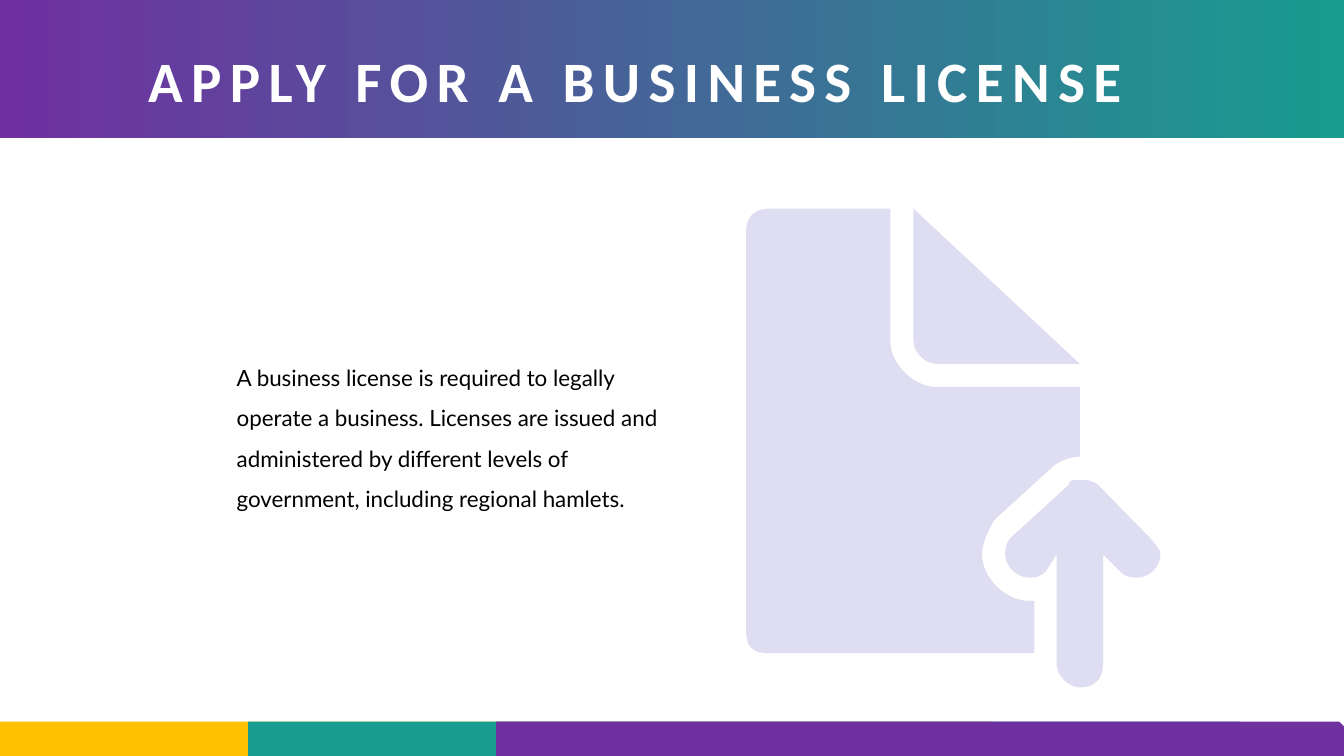
from dataclasses import dataclass

from lxml.etree import SubElement
from pptx import Presentation
from pptx.dml.color import RGBColor
from pptx.enum.shapes import MSO_SHAPE as Preset
from pptx.enum.text import MSO_ANCHOR as Anchor, MSO_AUTO_SIZE as AutoSize, PP_ALIGN as Align
from pptx.oxml.ns import qn
from pptx.shapes.autoshape import Shape
from pptx.slide import Slide
from pptx.util import Inches, Pt

WHITE = RGBColor(0xFF, 0xFF, 0xFF)
BLACK = RGBColor(0x00, 0x00, 0x00)
PURPLE = RGBColor(0x70, 0x30, 0xA0)
TEAL = RGBColor(0x18, 0x9C, 0x8F)
AMBER = RGBColor(0xFF, 0xC0, 0x00)
LAVENDER = RGBColor(0xDE, 0xDD, 0xF1)

PAGE_WIDTH, PAGE_HEIGHT = 13.33, 7.5
HEADER_HEIGHT = 1.37
BAR_STEP, BAR_HEIGHT = 2.46, 0.34


@dataclass(frozen=True)
class Bar:
    width: float
    color: RGBColor


@dataclass(frozen=True)
class TextStyle:
    font: str
    size: float
    color: RGBColor
    line_spacing: float
    space_before: float = 0
    bold: bool = False
    tracking: float = 0


@dataclass(frozen=True)
class Contour:
    start: tuple[float, float]
    segments: list[tuple[float, ...]]


TITLE_STYLE = TextStyle("Calibri", 40.8, WHITE, 0.8, space_before=10, bold=True, tracking=6)
BODY_STYLE = TextStyle("Lato", 16, BLACK, 1.5)

BARS = [Bar(9.89, AMBER), Bar(9.89, TEAL), Bar(8.42, PURPLE)]

ARROW = Contour((11.28, 5.73), [
    (11.23, 5.73, 11.17, 5.73, 11.11, 5.67),
    (10.94, 5.5),
    (10.94, 6.59),
    (10.94, 6.7, 10.89, 6.82, 10.71, 6.82),
    (10.6, 6.82, 10.48, 6.7, 10.48, 6.59),
    (10.48, 5.5),
    (10.37, 5.67),
    (10.31, 5.73, 10.26, 5.73, 10.2, 5.73),
    (10.09, 5.73, 9.97, 5.62, 9.97, 5.5),
    (9.97, 5.45, 9.97, 5.39, 10.03, 5.33),
    (10.6, 4.81),
    (10.6, 4.76, 10.65, 4.76, 10.71, 4.76),
    (10.77, 4.76, 10.83, 4.76, 10.89, 4.81),
    (11.4, 5.33),
    (11.45, 5.39, 11.51, 5.45, 11.51, 5.5),
    (11.51, 5.62, 11.4, 5.73, 11.28, 5.73),
])
SHEET = Contour((9.86, 5.16), [
    (9.8, 5.27, 9.74, 5.39, 9.74, 5.5),
    (9.74, 5.73, 9.97, 5.96, 10.2, 5.96),
    (10.26, 5.96),
    (10.26, 6.48),
    (7.63, 6.48),
    (7.46, 6.48, 7.4, 6.42, 7.4, 6.25),
    (7.4, 2.29),
    (7.4, 2.18, 7.46, 2.07, 7.63, 2.07),
    (8.83, 2.07),
    (8.83, 3.38),
    (8.83, 3.61, 9.06, 3.84, 9.29, 3.84),
    (10.71, 3.84),
    (10.71, 4.53),
    (10.6, 4.53, 10.48, 4.59, 10.43, 4.64),
])
FOLDED_CORNER = Contour((9.29, 3.61), [
    (9.17, 3.61, 9.06, 3.49, 9.06, 3.38),
    (9.06, 2.07),
    (10.71, 3.61),
])
ICON = [ARROW, SHEET, FOLDED_CORNER]


def make_flat(shape: Shape, color: RGBColor) -> None:
    shape.shadow.inherit = False
    shape.line.fill.background()
    shape.fill.solid()
    shape.fill.fore_color.rgb = color


def place(shape: Shape, left: float, top: float, width: float, height: float) -> None:
    shape.left, shape.top = Inches(left), Inches(top)
    shape.width, shape.height = Inches(width), Inches(height)


def write(box: Shape, text: str, style: TextStyle) -> None:
    frame = box.text_frame
    frame.word_wrap = True
    frame.auto_size = AutoSize.NONE
    frame.vertical_anchor = Anchor.TOP
    para = frame.paragraphs[0]
    para.alignment = Align.LEFT
    para.line_spacing = style.line_spacing
    para.space_before = Pt(style.space_before)
    span = para.add_run()
    span.text = text
    span.font.name = style.font
    span.font.size = Pt(style.size)
    span.font.bold = style.bold
    span.font.color.rgb = style.color
    if style.tracking:
        span._r.get_or_add_rPr().set("spc", str(round(style.tracking * 100)))


def add_header(page: Slide) -> None:
    header = page.shapes.add_shape(
        Preset.RECTANGLE, 0, 0, Inches(PAGE_WIDTH), Inches(HEADER_HEIGHT)
    )
    header.shadow.inherit = False
    header.line.fill.background()
    header.fill.gradient()
    header.fill.gradient_angle = 0
    for stop, color in zip(header.fill.gradient_stops, (PURPLE, TEAL)):
        stop.color.rgb = color
    title = page.shapes.title
    title.element.addprevious(header.element)
    place(title, 1.37, 0.53, 11.47, 0.7)
    write(title, "APPLY FOR A BUSINESS LICENSE", TITLE_STYLE)


def add_footer(page: Slide) -> None:
    footer = page.shapes.add_group_shape()
    for index, bar in enumerate(BARS):
        strip = footer.shapes.add_shape(
            Preset.SNIP_1_RECTANGLE,
            Inches(index * BAR_STEP), Inches(PAGE_HEIGHT - BAR_HEIGHT),
            Inches(bar.width), Inches(BAR_HEIGHT),
        )
        make_flat(strip, bar.color)


def add_body(page: Slide) -> None:
    box = page.shapes.add_textbox(Inches(2.25), Inches(3.43), Inches(4.54), Inches(1.66))
    write(
        box,
        "A business license is required to legally operate a business. "
        "Licenses are issued and administered by different levels of "
        "government, including regional hamlets.",
        BODY_STYLE,
    )


def bend_segments(shape: Shape, contours: list[Contour]) -> None:
    segments = [segment for contour in contours for segment in contour.segments]
    lines = list(shape.element.iter(qn("a:lnTo")))
    for line, segment in zip(lines, segments):
        if len(segment) == 2:
            continue
        line.tag = qn("a:cubicBezTo")
        end = line[0]
        for x, y in (segment[0:2], segment[2:4]):
            control = SubElement(line, qn("a:pt"))
            control.set("x", str(Inches(x) - shape.left))
            control.set("y", str(Inches(y) - shape.top))
        line.append(end)


def add_upload_icon(page: Slide) -> None:
    builder = page.shapes.build_freeform(*map(Inches, ICON[0].start))
    for index, contour in enumerate(ICON):
        if index:
            builder.move_to(*map(Inches, contour.start))
        corners = [(Inches(segment[-2]), Inches(segment[-1])) for segment in contour.segments]
        builder.add_line_segments(corners, close=True)
    icon = builder.convert_to_shape()
    bend_segments(icon, ICON)
    make_flat(icon, LAVENDER)


def main() -> None:
    deck = Presentation()
    deck.slide_width, deck.slide_height = Inches(PAGE_WIDTH), Inches(PAGE_HEIGHT)
    page = deck.slides.add_slide(deck.slide_layouts[5])
    add_header(page)
    add_footer(page)
    add_body(page)
    add_upload_icon(page)
    deck.save("out.pptx")


if __name__ == "__main__":
    main()
